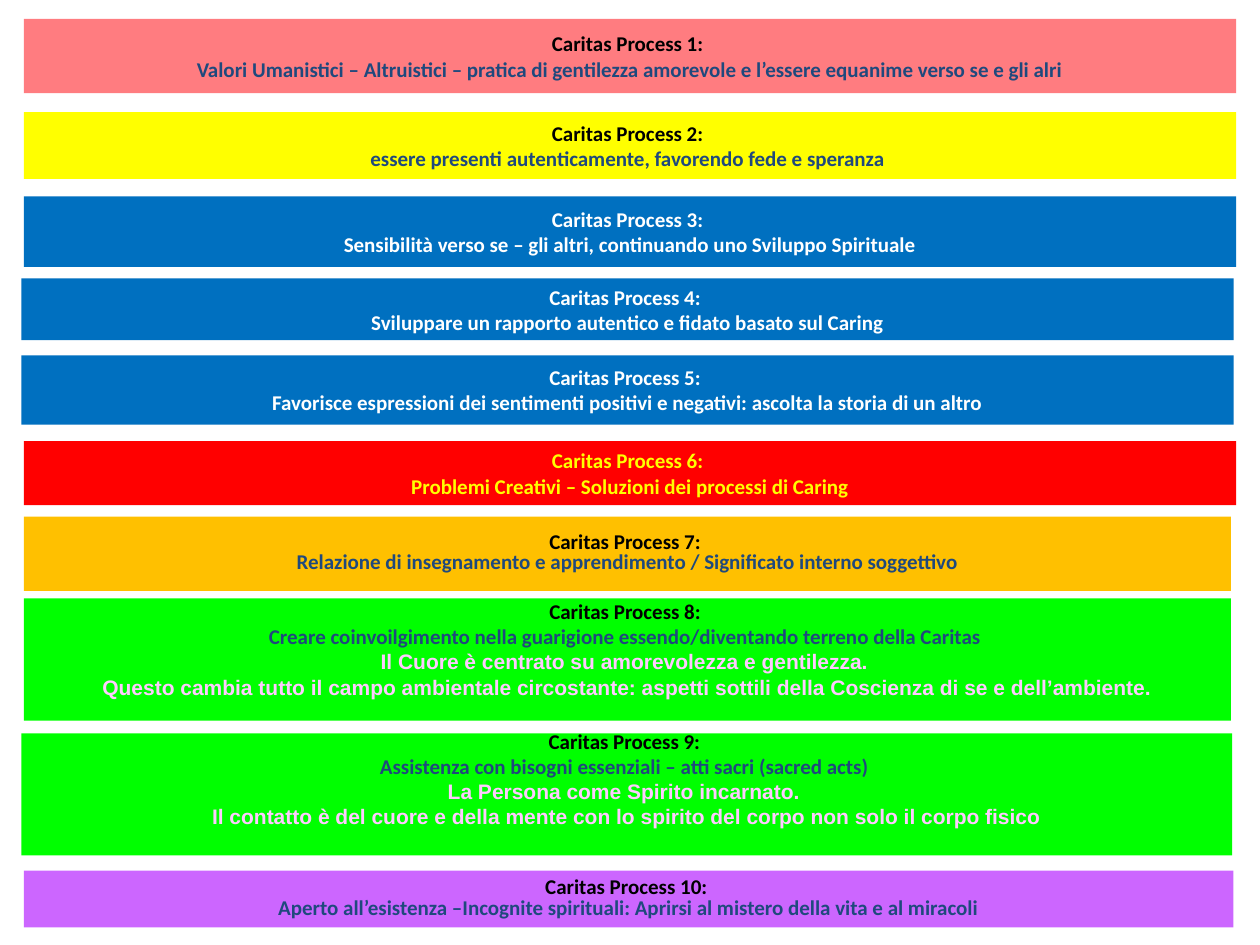
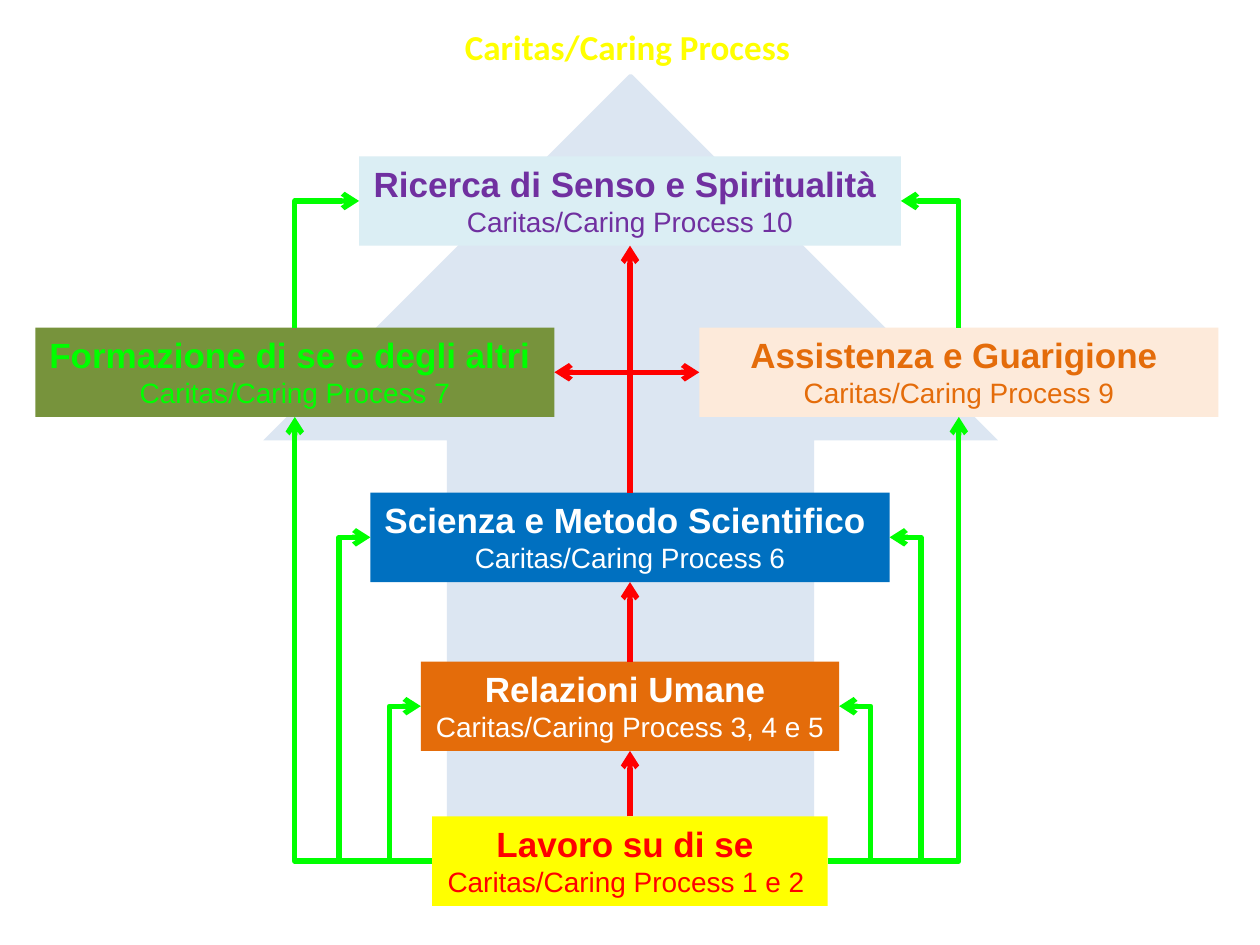
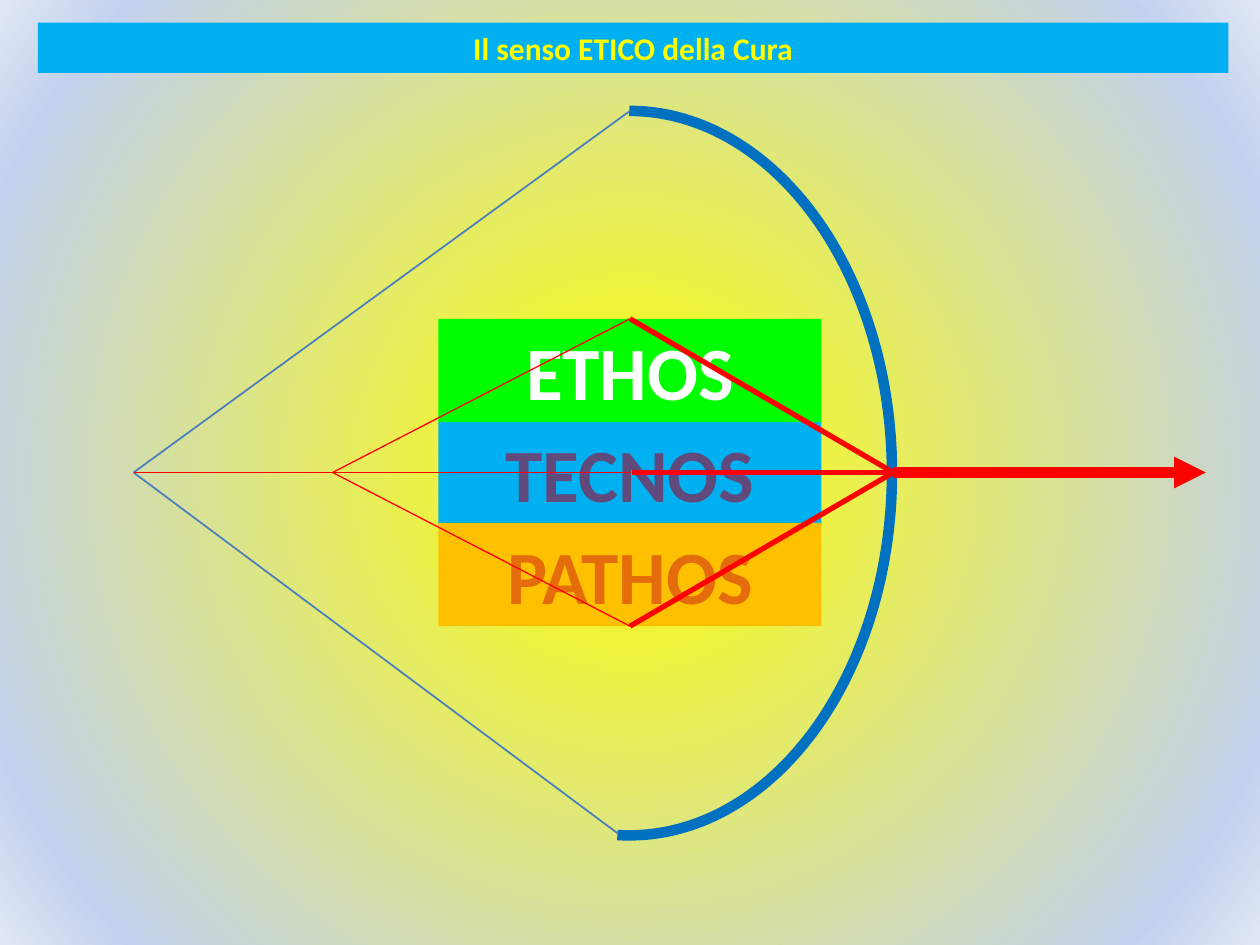
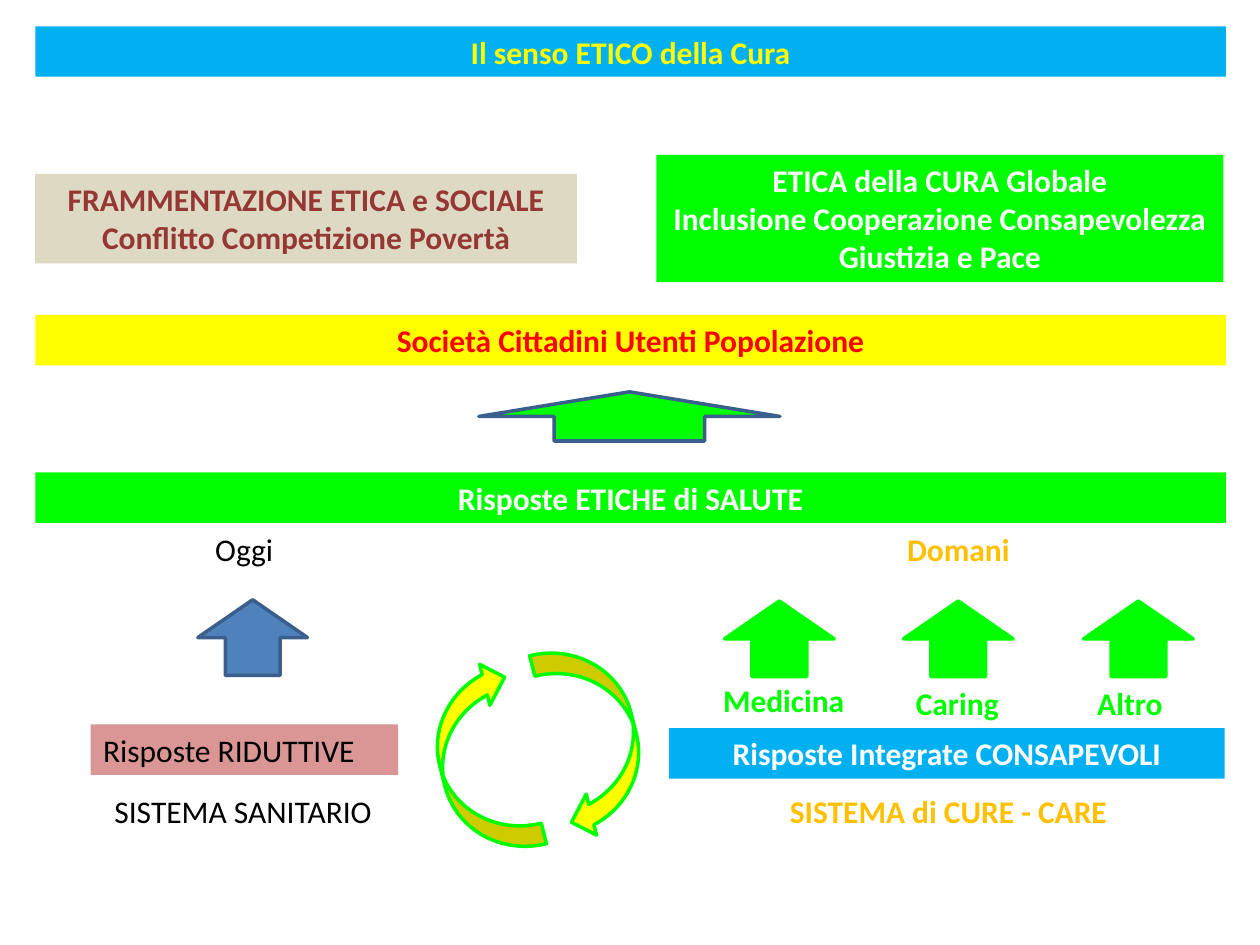
from dataclasses import dataclass

from lxml import etree
from pptx import Presentation
from pptx import util as u
from pptx.dml.color import RGBColor
from pptx.enum import shapes, text
from pptx.oxml import parse_xml
from pptx.oxml.ns import nsdecls, qn


@dataclass(frozen=True)
class Theme:
    white: str = "FFFFFF"
    black: str = "000000"
    yellow: str = "FFFF00"
    red: str = "FF0000"
    green: str = "00FF00"
    blue: str = "0070C0"
    sky: str = "00B0F0"
    navy: str = "1F497D"
    gold: str = "FFC000"
    orange: str = "E46C0A"
    pink: str = "FFCCFF"
    steel: str = "3A5F8C"
    string: str = "4B7EBC"
    body: str = "Calibri"
    label: str = "Arial"
    small: int = 12
    medium: int = 16
    title: int = 18
    large: int = 20
    huge: int = 43


T = Theme()
PX = 9144  # 100 px to the inch
SHAPE = shapes.MSO_SHAPE
ALIGN = text.PP_ALIGN
ANCHOR = text.MSO_ANCHOR
TOP, LEFT, BOTTOM, RIGHT = range(4)


def box(s, at, lines=(), kind=SHAPE.RECTANGLE, fill=None, line=None, pt=2, rot=0,
        anchor=ANCHOR.TOP, inset=5, wrap=True, grow=True, **fmt):
    """Add a shape, or a text box if kind is None; a line is text or (text, format)."""
    at = [v * PX for v in at]
    sp = s.shapes.add_shape(kind, *at) if kind else s.shapes.add_textbox(*at)
    sp.shadow.inherit = False
    sp.rotation = rot
    if fill:
        sp.fill.solid()
        sp.fill.fore_color.rgb = RGBColor.from_string(fill)
    else:
        sp.fill.background()
    if line:
        sp.line.color.rgb = RGBColor.from_string(line)
        sp.line.width = u.Pt(pt)
    else:
        sp.line.fill.background()
    if not lines:
        return sp
    tf = sp.text_frame
    tf.word_wrap = wrap
    tf.auto_size = text.MSO_AUTO_SIZE.SHAPE_TO_FIT_TEXT if grow else text.MSO_AUTO_SIZE.NONE
    tf.vertical_anchor = anchor
    tf.margin_top = tf.margin_bottom = inset * PX
    for i, item in enumerate(lines):
        words, own = (item, {}) if isinstance(item, str) else item
        f = {"size": T.title, "color": T.white, "bold": True, "font": T.body,
             "align": ALIGN.CENTER, "spacing": None, **fmt, **own}
        p = tf.add_paragraph() if i else tf.paragraphs[0]
        p.alignment = f["align"]
        p.line_spacing = f["spacing"]
        r = p.add_run()
        r.text = words
        r.font.size, r.font.name, r.font.bold = u.Pt(f["size"]), f["font"], f["bold"]
        r.font.color.rgb = RGBColor.from_string(f["color"])
    return sp


def link(s, start, end, color, pt, tip=None, bend=None):
    """Connect two ends, each (x, y) or (shape, site); bend is loop, across or up."""
    kind = shapes.MSO_CONNECTOR.ELBOW if bend else shapes.MSO_CONNECTOR.STRAIGHT
    c = s.shapes.add_connector(kind, 0, 0, 0, 0)
    if isinstance(start[0], int):
        c.begin_x, c.begin_y = start[0] * PX, start[1] * PX
    else:
        c.begin_connect(*start)
    if isinstance(end[0], int):
        c.end_x, c.end_y = end[0] * PX, end[1] * PX
    else:
        c.end_connect(*end)
    c.line.color.rgb = RGBColor.from_string(color)
    c.line.width = u.Pt(pt)
    pr = c._element.spPr
    if tip:
        etree.SubElement(pr.find(qn("a:ln")), qn("a:tailEnd"), type=tip)
    etree.SubElement(pr, qn("a:effectLst"))
    geom, xfrm = pr.find(qn("a:prstGeom")), pr.find(qn("a:xfrm"))
    if bend == "loop":  # the bend lies 25 px beyond the end
        reach = round((c.width + 25 * PX) / c.width * 100000)
        etree.SubElement(geom.find(qn("a:avLst")), qn("a:gd"), name="adj1", fmla=f"val {reach}")
    elif bend:
        geom.set("prst", "bentConnector2")
    if bend == "up":  # vertical first: a quarter turn about the centre
        w, h = c.width, c.height
        c.left, c.top = c.left + (w - h) // 2, c.top + (h - w) // 2
        c.width, c.height = h, w
        xfrm.flipV, xfrm.flipH = xfrm.flipH, False
        xfrm.rot = 270
    return c


prs = Presentation()
prs.slide_width, prs.slide_height = 1000 * PX, 750 * PX
blank = prs.slide_layouts[6]

# Slide 1: the ten processes (place, fill, heading colour, text colour, lines, spacing)
s = prs.slides.add_slide(blank)
spirit = {"font": T.label, "color": T.pink}
processes = [
    ((19, 15, 962, 59), "FF7C80", T.black, T.navy,
     ["Valori Umanistici – Altruistici – pratica di gentilezza amorevole e l’essere equanime verso se e gli alri"], None),
    ((19, 89, 962, 53), T.yellow, T.black, T.navy,
     ["essere presenti autenticamente, favorendo fede e speranza "], None),
    ((19, 156, 962, 56), T.blue, T.white, T.white,
     ["Sensibilità verso se – gli altri, continuando uno Sviluppo Spirituale"], None),
    ((17, 221, 962, 49), T.blue, T.white, T.white,
     ["Sviluppare un rapporto autentico e fidato basato sul Caring"], None),
    ((17, 282, 962, 55), T.blue, T.white, T.white,
     ["Favorisce espressioni dei sentimenti positivi e negativi: ascolta la storia di un altro"], None),
    ((19, 350, 962, 51), T.red, T.yellow, T.yellow,
     ["Problemi Creativi – Soluzioni dei processi di Caring"], None),
    ((19, 410, 958, 59), T.gold, T.black, T.navy,
     ["Relazione di insegnamento e apprendimento / Significato interno soggettivo"], 0.8),
    ((19, 475, 958, 97), T.green, T.black, T.navy,
     ["Creare coinvoilgimento nella guarigione essendo/diventando terreno della Caritas ",
      ("Il Cuore è centrato su amorevolezza e gentilezza. ", spirit),
      ("Questo cambia tutto il campo ambientale circostante: aspetti sottili della Coscienza "
       "di se e dell’ambiente.", spirit)], None),
    ((17, 582, 961, 97), T.green, T.black, T.navy,
     ["Assistenza con bisogni essenziali – atti sacri (sacred acts) ",
      ("La Persona come Spirito incarnato. ", spirit),
      ("Il contatto è del cuore e della mente con lo spirito del corpo non solo il corpo fisico", spirit)], None),
    ((19, 691, 960, 45), "CC66FF", T.black, T.navy,
     ["Aperto all’esistenza –Incognite spirituali: Aprirsi al mistero della vita e al miracoli"], 0.8),
]
for number, (at, fill, head, color, lines, spacing) in enumerate(processes, 1):
    heading = (f"Caritas Process {number}: ", {"color": head, "spacing": 0.8 if number == 9 else spacing})
    tall = len(lines) > 1
    box(s, at, [heading, *lines], fill=fill, color=color, size=T.small, spacing=spacing, grow=False,
        anchor=ANCHOR.TOP if tall else ANCHOR.MIDDLE, inset=0 if tall else 5)

# Slide 2: the process map
s = prs.slides.add_slide(blank)
box(s, (209, 58, 583, 661), kind=SHAPE.UP_ARROW, fill="DCE6F2")
box(s, (359, 15, 281, 44), ["Caritas/Caring Process"], fill=T.white, color=T.yellow,
    size=T.large, align=ALIGN.LEFT, wrap=False)
steps = [
    ("self", 343, 648, 314, T.yellow, T.red, "Lavoro su di se ", "1 e 2 "),
    ("relations", 334, 525, 332, T.orange, T.white, "Relazioni Umane ", "3, 4 e 5"),
    ("science", 294, 391, 412, T.blue, T.white, "Scienza e Metodo Scientifico ", "6"),
    ("training", 28, 260, 412, "77933C", T.green, "Formazione di se e degli altri ", "7"),
    ("healing", 555, 260, 412, "FDEADA", T.orange, "Assistenza e Guarigione ", "9"),
    ("meaning", 285, 124, 430, "DBEEF4", "7030A0", "Ricerca di Senso e Spiritualità ", "10"),
]
node = {}
for name, x, y, w, fill, color, title, numbers in steps:
    detail = (f"Caritas/Caring Process {numbers}", {"size": T.medium, "bold": False})
    node[name] = box(s, (x, y, w, 71), [title, detail], fill=fill, color=color,
                     size=T.large, font=T.label, wrap=name == "healing")
links = [
    ("self", LEFT, "relations", LEFT, T.green, "loop"),
    ("self", RIGHT, "relations", RIGHT, T.green, "loop"),
    ("self", RIGHT, "science", RIGHT, T.green, "loop"),
    ("self", LEFT, "science", LEFT, T.green, "loop"),
    ("self", LEFT, "training", BOTTOM, T.green, "across"),
    ("self", RIGHT, "healing", BOTTOM, T.green, "across"),
    ("self", TOP, "relations", BOTTOM, T.red, None),
    ("relations", TOP, "science", BOTTOM, T.red, None),
    ("science", TOP, "training", RIGHT, T.red, "up"),
    ("science", TOP, "healing", LEFT, T.red, "up"),
    ("science", TOP, "meaning", BOTTOM, T.red, None),
    ("training", TOP, "meaning", LEFT, T.green, "up"),
    ("healing", TOP, "meaning", RIGHT, T.green, "up"),
]
for a, a_site, b, b_site, color, bend in links:
    link(s, (node[a], a_site), (node[b], b_site), color, 3, "arrow", bend)

# Slide 3: bow and arrow on a radial background
s = prs.slides.add_slide(blank)
stops = "".join(f'<a:gs pos="{pos}000"><a:srgbClr val="{color}"/></a:gs>'
                for pos, color in [(0, T.yellow), (87, "C2D1ED"), (100, "E1E8F5")])
s._element.cSld.insert(0, parse_xml(
    f'<p:bg {nsdecls("p", "a")}><p:bgPr><a:gradFill rotWithShape="1"><a:gsLst>{stops}</a:gsLst>'
    '<a:path path="circle"><a:fillToRect l="50000" t="50000" r="50000" b="50000"/></a:path>'
    '</a:gradFill><a:effectLst/></p:bgPr></p:bg>'))
ethics_title = {"lines": ["Il senso ETICO della Cura"], "fill": T.sky, "color": T.yellow}
box(s, (30, 18, 945, 40), **ethics_title)
tecnos, ethos, pathos = [
    box(s, (348, y, 304, 82), [word], fill=fill, color=color, size=T.huge)
    for word, y, fill, color in [("TECNOS", 334, T.sky, "604A7B"),
                                 ("ETHOS", 253, T.green, T.white),
                                 ("PATHOS", 415, T.gold, T.orange)]]
bow = box(s, (291, 88, 417, 575), kind=SHAPE.ARC, line=T.blue, pt=6)
bow.adjustments[0], bow.adjustments[1] = 162, 55.13
nock, fork, grip = (106, 375), (264, 375), (709, 375)
link(s, fork, (500, 375), T.red, 0.75)
for bow_end in [(500, 88), (491, 662)]:
    link(s, bow_end, nock, T.string, 1)
for corner in [(ethos, TOP), (pathos, BOTTOM)]:
    link(s, grip, corner, T.red, 3)
    link(s, corner, fork, T.red, 0.75)
link(s, grip, (957, 375), T.red, 6, "triangle")
link(s, nock, fork, T.red, 0.75)
link(s, (502, 375), (711, 375), T.red, 3)

# Slide 4: bars and panels
s = prs.slides.add_slide(blank)
box(s, (28, 21, 945, 40), **ethics_title)
panels = [
    ((28, 250, 945, 40), ["Società Cittadini Utenti Popolazione"], T.yellow, T.red),
    ((28, 375, 945, 40), ["Risposte ETICHE di SALUTE"], T.green, T.white),
    ((531, 578, 441, 40), ["Risposte Integrate CONSAPEVOLI"], T.sky, T.white),
    ((521, 123, 450, 101), ["ETICA della CURA Globale", "Inclusione Cooperazione Consapevolezza",
                            "Giustizia e Pace"], T.green, T.white),
    ((28, 138, 430, 71), ["FRAMMENTAZIONE ETICA e SOCIALE", "Conflitto Competizione Povertà"],
     "DDD9C3", "953735"),
]
for at, lines, fill, color in panels:
    box(s, at, lines, fill=fill, color=color)
box(s, (72, 575, 244, 40), ["Risposte RIDUTTIVE"], fill="D99694", color=T.black,
    bold=False, align=ALIGN.LEFT)

# Plain labels: today in black, tomorrow in bold colour
labels = [
    ("Oggi", 161, 416, 67, T.black),
    ("SISTEMA SANITARIO", 81, 624, 226, T.black),
    ("Domani", 710, 416, 102, T.gold),
    ("SISTEMA di CURE - CARE", 617, 624, 274, T.gold),
    ("Medicina", 564, 536, 117, T.green),
    ("Caring", 717, 538, 86, T.green),
    ("Altro", 861, 538, 72, T.green),
]
for words, x, y, w, color in labels:
    box(s, (x, y, w, 40), [words], kind=None, color=color, bold=color != T.black,
        align=ALIGN.LEFT, wrap=False)

# Block arrows pointing up
arrows = [((157, 476, 87, 60), "4F81BD", T.steel), ((380, 311, 239, 39), T.green, T.steel)]
arrows += [((x, 477, 87, 60), T.green, T.green) for x in (575, 717, 860)]
for at, fill, line in arrows:
    box(s, at, kind=SHAPE.DOWN_ARROW, fill=fill, line=line, rot=180)

# Cycle of two curved arrows
cycle = s.shapes.add_group_shape()
for x, y, rot in [(395, 553, 75.9), (306, 570, 255.9)]:
    box(cycle, (x, y, 153, 67), kind=SHAPE.CURVED_DOWN_ARROW, fill=T.yellow, line=T.green, rot=rot)

prs.save("out.pptx")
